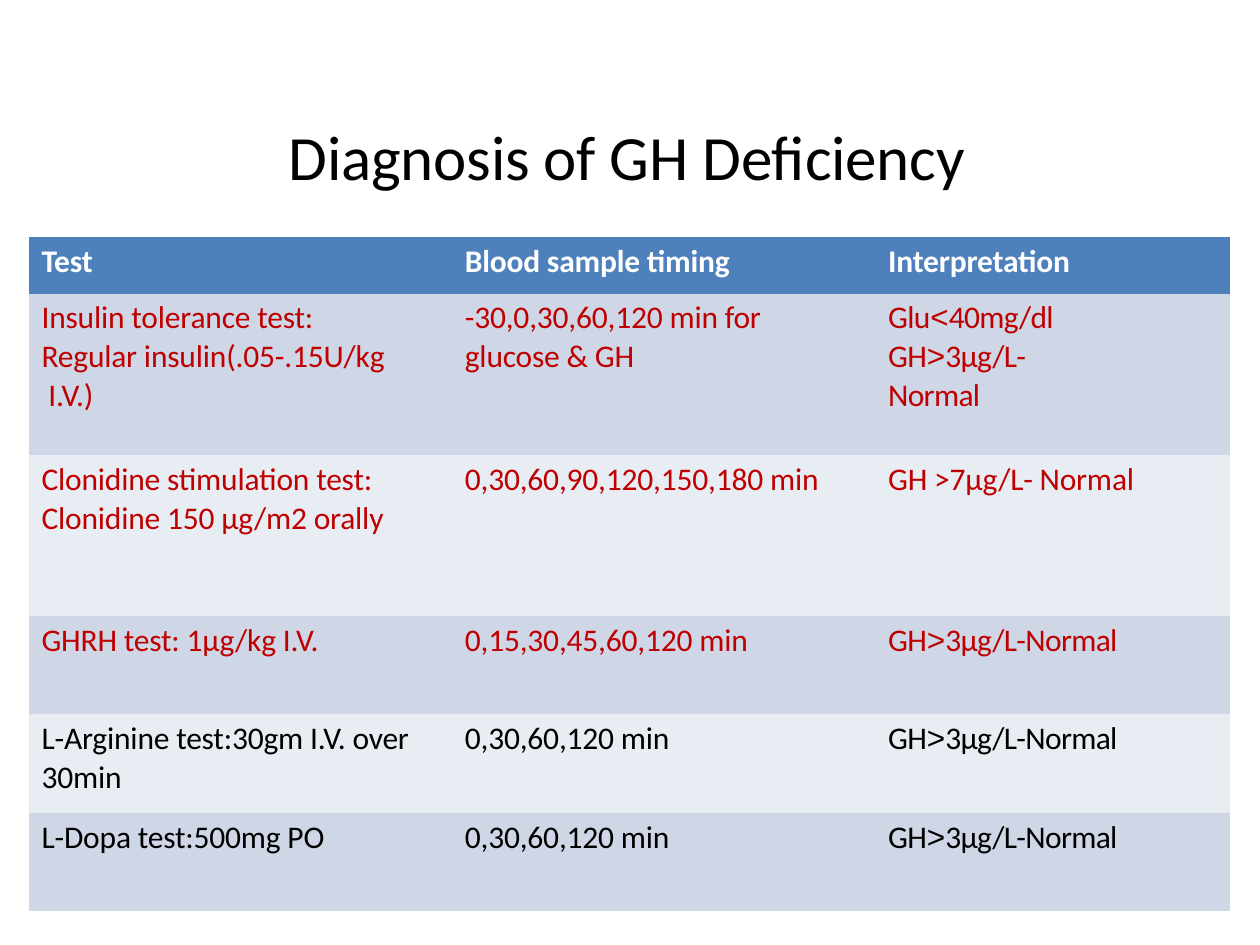
from itertools import groupby

from pptx import Presentation
from pptx.dml.color import RGBColor
from pptx.oxml.ns import qn
from pptx.util import Inches, Pt

BLACK = RGBColor(0x00, 0x00, 0x00)
WHITE = RGBColor(0xFF, 0xFF, 0xFF)
RED = RGBColor(0xBF, 0x00, 0x00)
HEADER_BLUE = RGBColor(0x4E, 0x80, 0xBC)
BAND_DARK = RGBColor(0xCF, 0xD7, 0xE7)
BAND_LIGHT = RGBColor(0xE8, 0xEC, 0xF3)

NO_STYLE = "{2D5ABB26-0587-4C30-8999-92F81FD0307C}"
ARROWHEADS = "˂˃"
COLUMN_WIDTHS = (3.29, 3.27, 2.97)
COLUMN_INDENTS = (0.1, 0.17, 0.26)
ROW_HEIGHTS = (0.45, 1.28, 1.28, 0.78, 0.78, 0.78)
ROW_COLORS = (WHITE, RED, RED, RED, BLACK, BLACK)
ROWS = (
    ("Test", "Blood sample timing", "Interpretation"),
    (
        "Insulin tolerance test:\nRegular insulin(.05-.15U/kg\n I.V.)",
        "-30,0,30,60,120 min for\nglucose & GH",
        "Glu˂40mg/dl\nGH˃3µg/L-\nNormal",
    ),
    (
        "Clonidine stimulation test:\nClonidine 150 µg/m2 orally",
        "0,30,60,90,120,150,180 min",
        "GH >7µg/L- Normal",
    ),
    ("GHRH test: 1µg/kg I.V.", "0,15,30,45,60,120 min", "GH˃3µg/L-Normal"),
    ("L-Arginine test:30gm I.V. over\n30min", "0,30,60,120 min", "GH˃3µg/L-Normal"),
    ("L-Dopa test:500mg PO", "0,30,60,120 min", "GH˃3µg/L-Normal"),
)


def add_runs(paragraph, text, size, color, bold=False, tracking=-10):
    """Write text as runs, setting the arrowhead letters in Arial."""
    for is_arrowhead, letters in groupby(text, lambda letter: letter in ARROWHEADS):
        run = paragraph.add_run()
        run.text = "".join(letters)
        run.font.name = "Arial" if is_arrowhead else "Calibri"
        run.font.size = Pt(size)
        run.font.bold = bold
        run.font.color.rgb = color
        run.font._element.set("spc", str(tracking))


def add_title(slide, left, top, width, height):
    """Place the slide title."""
    text_frame = slide.shapes.add_textbox(left, top, width, height).text_frame
    text_frame.word_wrap = False
    text_frame.margin_left = text_frame.margin_right = text_frame.margin_bottom = 0
    text_frame.margin_left = text_frame.margin_top = Inches(0.01)
    add_runs(text_frame.paragraphs[0], "Diagnosis of GH Deficiency", 36, BLACK)


def fill_cell(cell, text, indent, fill, color, bold, tracking):
    """Fill one table cell with its lines of text."""
    cell.fill.solid()
    cell.fill.fore_color.rgb = fill
    cell.margin_left = indent
    cell.margin_top = Inches(0.04)
    cell.margin_right = cell.margin_bottom = 0
    cell.text_frame.text = text
    for paragraph in cell.text_frame.paragraphs:
        line = paragraph.text
        paragraph.clear()
        paragraph.line_spacing = 1.01
        add_runs(paragraph, line, 18, color, bold, tracking)


def add_test_table(slide, left, top, width, height):
    """Place the table of growth hormone tests."""
    frame = slide.shapes.add_table(
        len(ROWS), len(COLUMN_WIDTHS), left, top, width, height
    )
    table = frame.table
    table._tbl.tblPr.find(qn("a:tableStyleId")).text = NO_STYLE
    for column, column_width in zip(table.columns, COLUMN_WIDTHS):
        column.width = Inches(column_width)
    for index, (row, row_height) in enumerate(zip(table.rows, ROW_HEIGHTS)):
        row.height = Inches(row_height)
        is_header = index == 0
        band = BAND_DARK if index % 2 else BAND_LIGHT
        fill = HEADER_BLUE if is_header else band
        for cell, text, indent in zip(row.cells, ROWS[index], COLUMN_INDENTS):
            has_arrowhead = any(letter in ARROWHEADS for letter in text)
            tracking = -40 if has_arrowhead else -10
            fill_cell(
                cell, text, Inches(indent), fill, ROW_COLORS[index], is_header, tracking
            )


def main():
    """Build and save the presentation."""
    presentation = Presentation()
    presentation.slide_width = Inches(10)
    presentation.slide_height = Inches(7.5)
    slide = presentation.slides.add_slide(presentation.slide_layouts[6])
    add_title(slide, Inches(2.28), Inches(0.92), Inches(5.44), Inches(1.18))
    add_test_table(slide, Inches(0.23), Inches(1.88), Inches(9.53), Inches(5.34))
    presentation.save("out.pptx")


if __name__ == "__main__":
    main()
